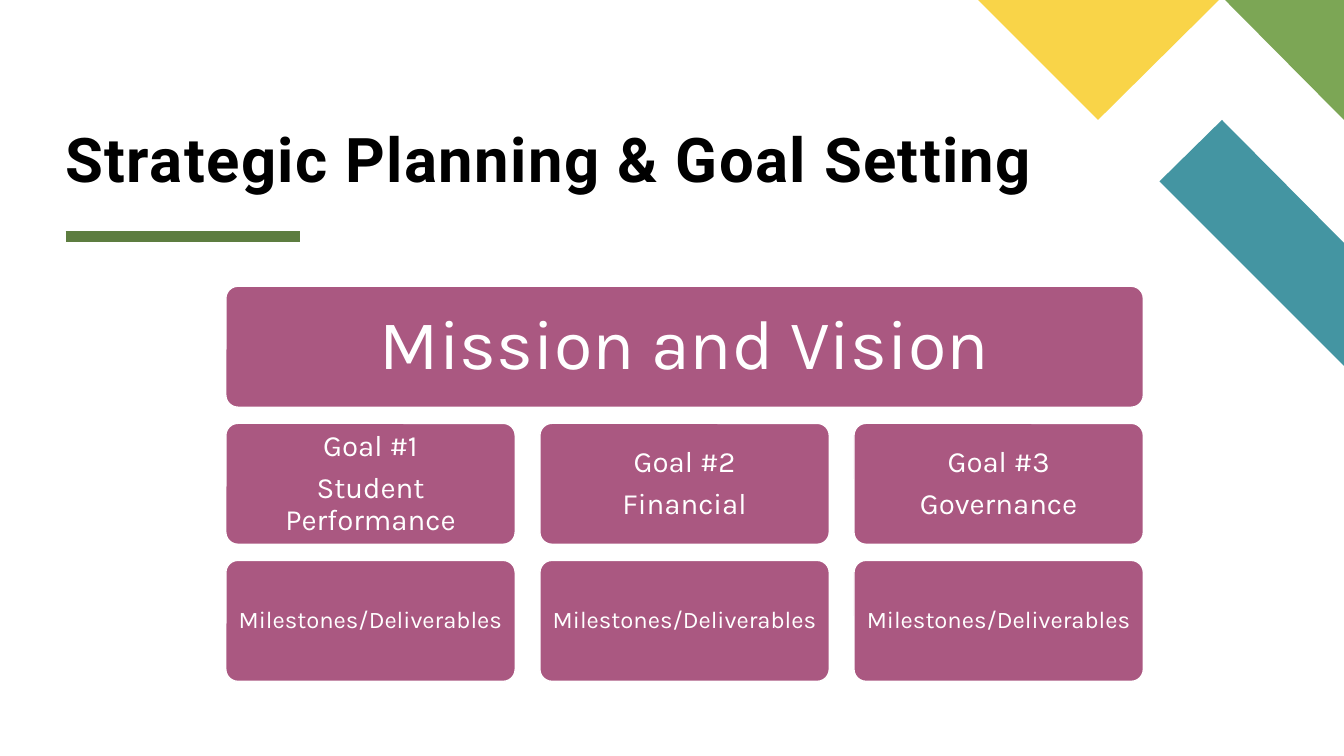
from lxml.etree import SubElement
from pptx import Presentation
from pptx.dml.color import RGBColor
from pptx.enum.shapes import MSO_CONNECTOR, MSO_SHAPE
from pptx.enum.text import MSO_ANCHOR as Anchor, PP_ALIGN as Align
from pptx.oxml.ns import qn
from pptx.util import Inches, Pt

WHITE = RGBColor(0xFF, 0xFF, 0xFF)
BLACK = RGBColor(0x00, 0x00, 0x00)
PLUM = RGBColor(0xAA, 0x58, 0x81)
TEAL = RGBColor(0x44, 0x95, 0xA2)
GREEN = RGBColor(0x7C, 0xA6, 0x55)
DARK_GREEN = RGBColor(0x5D, 0x7D, 0x40)
YELLOW = RGBColor(0xF9, 0xD4, 0x48)

SLIDE_WIDTH, SLIDE_HEIGHT = 13.33, 7.5
CHART_LEFT, CHART_TOP, CHART_WIDTH = 2.24, 2.84, 9.1
BOX_WIDTH, BOX_HEIGHT = 2.87, 1.2
COLUMN_STEP = (CHART_WIDTH - BOX_WIDTH) / 2
ROW_STEP = 1.36

GOALS = ["Student Performance", "Financial", "Governance"]

CORNER_PIECES = [
    (TEAL, [(13.33, 3.63), (13.33, 2.41), (12.12, 1.19), (11.5, 1.8)]),
    (GREEN, [(13.33, 1.19), (13.33, 0), (12.15, 0)]),
    (YELLOW, [(9.7, 0), (10.89, 1.19), (12.09, 0)]),
]


class SlideBuilder:
    heading_font = "Roboto"
    body_font = "Karla"

    def __init__(self, slide):
        self.slide = slide
        self.shapes = slide.shapes

    def set_frame(self, frame, anchor, inset):
        sides = ("margin_left", "margin_top", "margin_right", "margin_bottom")
        layout = {"word_wrap": True, "vertical_anchor": anchor}
        layout.update(dict.fromkeys(sides, Inches(inset)))
        for name, value in layout.items():
            setattr(frame, name, value)

    def set_font(self, font, color, **values):
        font.color.rgb = color
        for name, value in values.items():
            setattr(font, name, value)

    def corner_piece(self, color, points):
        start, *others = [(Inches(x), Inches(y)) for x, y in points]
        builder = self.shapes.build_freeform(*start)
        builder.add_line_segments(others, close=True)
        piece = builder.convert_to_shape()
        piece.shadow.inherit = False
        piece.fill.solid()
        piece.fill.fore_color.rgb = color
        piece.line.fill.background()

    def title(self, text, left, top, width, height):
        box = self.shapes.add_textbox(*map(Inches, (left, top, width, height)))
        self.set_frame(box.text_frame, Anchor.BOTTOM, 0)
        paragraph = box.text_frame.paragraphs[0]
        paragraph.line_spacing = 0.8
        run = paragraph.add_run()
        run.text = text
        self.set_font(run.font, BLACK, name=self.heading_font, size=Pt(44), bold=True)
        run._r.get_or_add_rPr().set("spc", "100")

    def rule(self, left, right, y, color, weight):
        rule = self.shapes.add_connector(
            MSO_CONNECTOR.STRAIGHT, *map(Inches, (left, y, right, y)))
        rule.line.color.rgb = color
        rule.line.width = Pt(weight)
        SubElement(rule._element.spPr, qn("a:effectLst"))

    def plan_box(self, lines, column, row, size, inset, width=BOX_WIDTH):
        """Place a rounded box at a cell of the planning hierarchy."""
        left = CHART_LEFT + column * COLUMN_STEP
        top = CHART_TOP + row * ROW_STEP
        box = self.shapes.add_shape(
            MSO_SHAPE.ROUNDED_RECTANGLE,
            *map(Inches, (left, top, width, BOX_HEIGHT)))
        box.adjustments[0] = 0.1
        box.shadow.inherit = False
        box.fill.solid()
        box.fill.fore_color.rgb = PLUM
        box.line.color.rgb = WHITE
        box.line.width = Pt(1)
        frame = box.text_frame
        self.set_frame(frame, Anchor.MIDDLE, inset)
        frame.text = "\n".join(lines)
        for paragraph in frame.paragraphs:
            paragraph.alignment = Align.CENTER
            paragraph.line_spacing = 0.9
            paragraph.space_after = Pt(0.35 * size)
            self.set_font(paragraph.runs[0].font, WHITE, name=self.body_font, size=Pt(size))


def main():
    deck = Presentation()
    deck.slide_width, deck.slide_height = Inches(SLIDE_WIDTH), Inches(SLIDE_HEIGHT)
    page = SlideBuilder(deck.slides.add_slide(deck.slide_layouts[6]))

    for color, points in CORNER_PIECES:
        page.corner_piece(color, points)
    page.rule(0.65, 2.98, 2.35, DARK_GREEN, 8)
    page.title("Strategic Planning & Goal Setting", 0.65, 0.3, 10.69, 1.63)

    page.plan_box(["Mission and Vision"], 0, 0, 50, 0.21, CHART_WIDTH)
    for column, goal in enumerate(GOALS):
        page.plan_box([f"Goal #{column + 1}", goal], column, 1, 21, 0.12)
        page.plan_box(["Milestones/Deliverables"], column, 2, 17, 0.09)

    deck.save("out.pptx")


if __name__ == "__main__":
    main()
